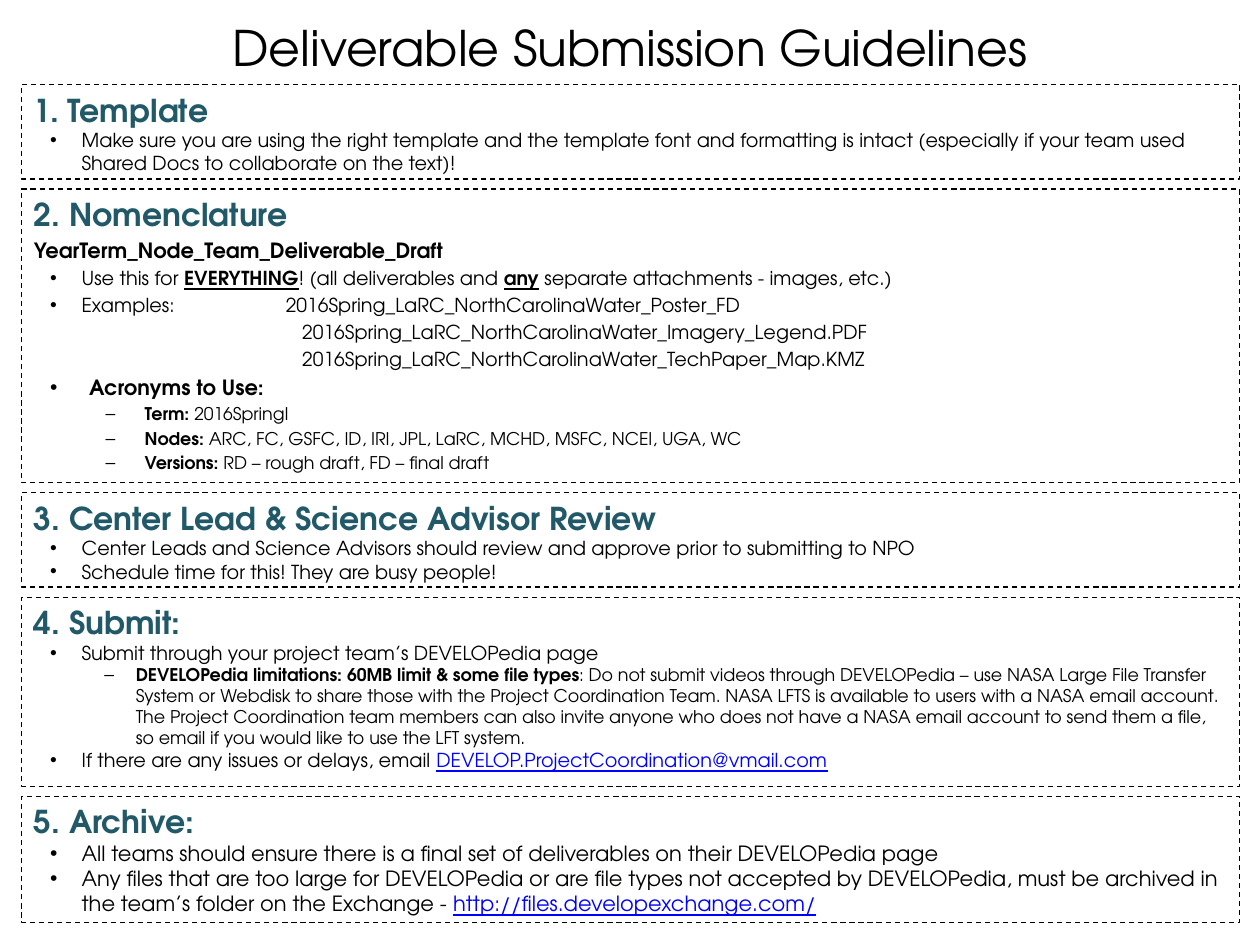
from pptx import Presentation
from pptx.dml.color import RGBColor
from pptx.enum.dml import MSO_LINE
from pptx.enum.shapes import MSO_SHAPE
from pptx.enum.text import MSO_ANCHOR, PP_ALIGN
from pptx.oxml.ns import qn
from pptx.util import Inches, Pt
from lxml.etree import SubElement

FONT = "TeX Gyre Adventor"
COLORS = {"text": "000000", "heading": "215968", "link": "0000FF"}
LINK = {"color": "link", "underline": True}
STRESS = {"bold": True, "underline": True}
BOLD = {"bold": True}


def add_text(tf, *parts, size=11, bold=False, color="text", align=PP_ALIGN.LEFT,
             bullet=None, left=0, hang=0, level=0, gap=0, tab=None):
    """Add a paragraph; each part is a string or a (string, run format) pair."""
    first = not tf.paragraphs[0].runs
    p = tf.paragraphs[0] if first else tf.add_paragraph()
    p.alignment, p.level = align, level
    p.space_before = Pt(0 if first else gap * size)
    pPr = p._p.get_or_add_pPr()
    pPr.set("marL", str(Inches(left)))
    pPr.set("indent", str(-Inches(hang)))
    if bullet:
        SubElement(pPr, qn("a:buFont"), typeface="Arial")
        SubElement(pPr, qn("a:buChar"), char=bullet)
    else:
        SubElement(pPr, qn("a:buNone"))
    if tab:
        pPr.set("defTabSz", str(Inches(tab / 2)))
        tabs = SubElement(pPr, qn("a:tabLst"))
        SubElement(tabs, qn("a:tab"), pos=str(Inches(tab)), algn="l")
    for part in parts:
        text, look = (part, {}) if isinstance(part, str) else part
        r = p.add_run()
        r.text = text
        r.font.name, r.font.size = FONT, Pt(size)
        r.font.bold = look.get("bold", bold)
        r.font.underline = look.get("underline", False)
        r.font.color.rgb = RGBColor.from_string(COLORS[look.get("color", color)])


def add_bullet(tf, *parts, left=0.38, hang=0.25, **fmt):
    add_text(tf, *parts, bullet="•", left=left, hang=hang, **fmt)


def add_dash(tf, *parts, left=0.81, hang=0.25, **fmt):
    add_text(tf, *parts, bullet="–", left=left, hang=hang, level=1, size=10, **fmt)


def add_title(slide, x, y, w, h):
    tf = slide.shapes.add_textbox(Inches(x), Inches(y), Inches(w), Inches(h)).text_frame
    tf.word_wrap = True
    tf.vertical_anchor = MSO_ANCHOR.MIDDLE
    add_text(tf, "Deliverable Submission Guidelines", size=28, align=PP_ALIGN.CENTER)


def add_section(slide, heading, x, y, w, h):
    """Dashed box with a heading; returns its text frame."""
    s = slide.shapes.add_shape(MSO_SHAPE.RECTANGLE, Inches(x), Inches(y), Inches(w), Inches(h))
    s.shadow.inherit = False
    s.fill.background()
    s.line.color.rgb = RGBColor.from_string(COLORS["text"])
    s.line.width = Pt(0.75)
    s.line.dash_style = MSO_LINE.DASH
    tf = s.text_frame
    tf.word_wrap = True
    tf.vertical_anchor = MSO_ANCHOR.TOP
    add_text(tf, heading, size=18, bold=True, color="heading")
    return tf


def add_template(slide, *box):
    tf = add_section(slide, "1. Template", *box)
    add_bullet(tf, "Make sure you are using the right template and the template font and "
                   "formatting is intact (especially if your team used Shared Docs to "
                   "collaborate on the text)!")


def add_nomenclature(slide, *box):
    gap = 0.2
    tf = add_section(slide, "2. Nomenclature", *box)
    add_text(tf, "YearTerm_Node_Team_Deliverable_Draft", size=12, bold=True, gap=gap)
    add_bullet(tf, "Use this for ", ("EVERYTHING", STRESS), "! (all deliverables and ",
               ("any", STRESS), " separate attachments - images, etc.)", gap=gap)
    # File name examples
    prefix = "2016Spring_LaRC_NorthCarolinaWater_"
    add_bullet(tf, f"Examples:\t{prefix}Poster_FD", gap=gap, tab=2)
    for ending in ("Imagery_Legend.PDF", "TechPaper_Map.KMZ"):
        add_text(tf, prefix + ending, left=2.13, gap=gap)
    # Acronyms
    add_bullet(tf, "Acronyms to Use:", size=12, bold=True, left=0.44, hang=0.31, gap=gap)
    for label, value in (
        ("Term: ", "2016Springl"),
        ("Nodes: ", "ARC, FC, GSFC, ID, IRI, JPL, LaRC, MCHD, MSFC, NCEI, UGA, WC"),
        ("Versions: ", "RD – rough draft, FD – final draft"),
    ):
        add_dash(tf, (label, BOLD), value, left=0.88, hang=0.31, gap=gap)


def add_review(slide, *box):
    tf = add_section(slide, "3. Center Lead & Science Advisor Review", *box)
    add_bullet(tf, "Center Leads and Science Advisors should review and approve prior to "
                   "submitting to NPO")
    add_bullet(tf, "Schedule time for this! They are busy people!")


def add_submit(slide, *box):
    tf = add_section(slide, "4. Submit:", *box)
    add_bullet(tf, "Submit through your project team’s DEVELOPedia page")
    add_dash(tf, ("DEVELOPedia limitations: 60MB limit & some file types", BOLD),
             ": Do not submit videos through DEVELOPedia – use NASA Large File Transfer "
             "System or Webdisk to share those with the Project Coordination Team. NASA LFTS "
             "is available to users with a NASA email account. The Project Coordination team "
             "members can also invite anyone who does not have a NASA email account to send "
             "them a file, so email if you would like to use the LFT system.")
    add_bullet(tf, "If there are any issues or delays, email ",
               ("DEVELOP.ProjectCoordination@vmail.com", LINK))


def add_archive(slide, *box):
    tf = add_section(slide, "5. Archive:", *box)
    add_bullet(tf, "All teams should ensure there is a final set of deliverables on their "
                   "DEVELOPedia page", size=12)
    add_bullet(tf, "Any files that are too large for DEVELOPedia or are file types not accepted "
                   "by DEVELOPedia, must be archived in the team’s folder on the Exchange - ",
               ("http://files.developexchange.com/", LINK), size=12)


def main():
    prs = Presentation()
    prs.slide_width, prs.slide_height = Inches(10), Inches(7.5)
    slide = prs.slides.add_slide(prs.slide_layouts[6])
    add_title(slide, 0, 0.08, 10, 0.58)

    # Sections stacked with equal gaps
    x, y, w, gap = 0.17, 0.67, 9.67, 0.08
    for add_part, h in ((add_template, 0.75), (add_nomenclature, 2.33), (add_review, 0.75),
                        (add_submit, 1.5), (add_archive, 1)):
        add_part(slide, x, y, w, h)
        y += h + gap
    prs.save("out.pptx")


if __name__ == "__main__":
    main()
